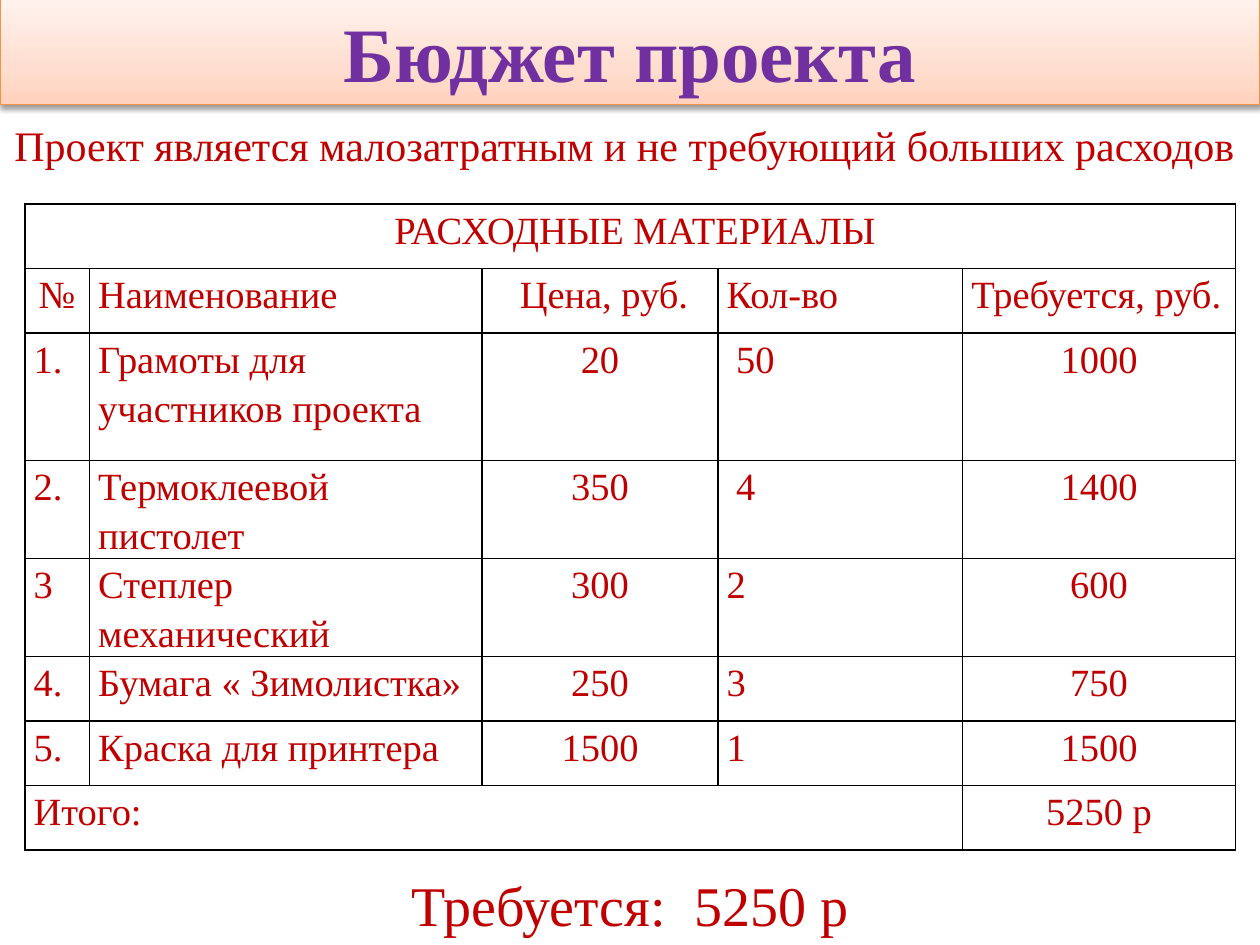
"""Build the project budget slide with its table of consumables."""
from lxml.etree import SubElement
from pptx import Presentation
from pptx.dml.color import RGBColor
from pptx.enum.text import MSO_ANCHOR, MSO_AUTO_SIZE, PP_ALIGN
from pptx.oxml import parse_xml
from pptx.oxml.ns import nsdecls, qn
from pptx.util import Cm, Pt

COLORS = {"text": "C00000", "title": "7030A0", "edge": "F69240", "border": "000000",
          "low": "FFD2BD", "middle": "FFDED0", "high": "FFF2ED"}
FORMATS = {
    "title": {"size": Pt(44), "bold": True, "color": "title"},
    "intro": {"size": Pt(24), "bold": False, "color": "text"},
    "cell": {"size": Pt(22), "bold": False, "color": "text"},
    "total": {"size": Pt(32), "bold": False, "color": "text"},
}
ROWS = [
    ["РАСХОДНЫЕ МАТЕРИАЛЫ", "", "", "", ""],
    ["№", "Наименование", "Цена, руб.", "Кол-во", "Требуется, руб."],
    ["1.", "Грамоты для участников проекта", "20", "50", "1000"],
    ["2.", "Термоклеевой пистолет", "350", "4", "1400"],
    ["3", "Степлер механический", "300", "2", "600"],
    ["4.", "Бумага « Зимолистка»", "250", "3", "750"],
    ["5.", "Краска для принтера", "1500", "1", "1500"],
    ["Итого:", "", "", "", "5250 р"],
]
COLUMN_WIDTHS = [1.3, 7.92, 4.75, 4.93, 5.51]
ROW_HEIGHTS = [1.3, 1.3, 2.57, 1.3, 1.3, 1.3, 1.3, 1.3]
INDENTS = {(0, 0): 0.19, (1, 2): 0.58, (2, 3): 0.19, (3, 3): 0.19}
CENTERED = {(0, 0), (1, 0)} | {(row, col) for row in range(2, 8) for col in (2, 4)}


def write(tf, text, style, align=PP_ALIGN.CENTER):
    p = tf.paragraphs[0]
    p.alignment = align
    r = p.add_run()
    r.text = text
    r.font.name = "Times New Roman"
    for name, value in FORMATS[style].items():
        if name == "color":
            r.font.color.rgb = RGBColor.from_string(COLORS[value])
        else:
            setattr(r.font, name, value)
    return p


def add_border(tc_pr, position, side):
    ln = SubElement(tc_pr, qn(f"a:{side}"), w=str(Pt(1)))
    fill = SubElement(ln, qn("a:solidFill"))
    SubElement(fill, qn("a:srgbClr"), val=COLORS["border"])
    tc_pr.insert(position, ln)


prs = Presentation()
prs.slide_width, prs.slide_height = Cm(25.4), Cm(19.05)
s = prs.slides.add_slide(prs.slide_layouts[5])

table = s.shapes.add_table(8, 5, Cm(0.5), Cm(4.11), Cm(24.41), Cm(11.67)).table
table.first_row = table.horz_banding = False
for column, width in zip(table.columns, COLUMN_WIDTHS):
    column.width = Cm(width)
for row, height in zip(table.rows, ROW_HEIGHTS):
    row.height = Cm(height)
table.cell(0, 0).merge(table.cell(0, 4))
table.cell(7, 0).merge(table.cell(7, 3))

for row, texts in enumerate(ROWS):
    for col, text in enumerate(texts):
        cell = table.cell(row, col)
        margins = {"margin_left": 0.18 + INDENTS.get((row, col), 0), "margin_right": 0.18,
                   "margin_top": 0, "margin_bottom": 0}
        for name, value in margins.items():
            setattr(cell, name, Cm(value))
        cell.fill.background()
        tc_pr = cell._tc.get_or_add_tcPr()
        for position, side in enumerate(("lnL", "lnR", "lnT", "lnB")):
            add_border(tc_pr, position, side)
        if text:
            align = PP_ALIGN.CENTER if (row, col) in CENTERED else PP_ALIGN.LEFT
            write(cell.text_frame, text, "cell", align).line_spacing = 1.15

notes = [
    ("Проект является малозатратным и не требующий больших расходов", "intro", 2.4, 25.18, 1),
    ("Требуется:  5250 р", "total", 17.42, 25.4, 1.63),
]
for text, style, top, width, height in notes:
    sp = s.shapes.add_textbox(0, Cm(top), Cm(width), Cm(height))
    tf = sp.text_frame
    tf.word_wrap = True
    if style == "intro":
        for side in ("left", "right", "top", "bottom"):
            setattr(tf, f"margin_{side}", 0)
    write(tf, text, style)

title = s.shapes.title
title.left, title.top, title.width, title.height = Cm(0), Cm(-0.02), Cm(25.4), Cm(2.13)
stops = "".join(
    f'<a:gs pos="{position}"><a:srgbClr val="{COLORS[name]}"/></a:gs>'
    for position, name in ((0, "low"), (35000, "middle"), (100000, "high")))
sp_pr = title._element.spPr
sp_pr.append(parse_xml(
    f'<a:gradFill {nsdecls("a")} rotWithShape="1"><a:gsLst>{stops}</a:gsLst>'
    '<a:lin ang="16200000" scaled="1"/></a:gradFill>'))
title.line.color.rgb = RGBColor.from_string(COLORS["edge"])
title.line.width = Pt(0.75)
sp_pr.append(parse_xml(
    f'<a:effectLst {nsdecls("a")}><a:outerShdw blurRad="40000" dist="20000" dir="5400000" '
    'rotWithShape="0"><a:srgbClr val="000000"><a:alpha val="38000"/></a:srgbClr>'
    '</a:outerShdw></a:effectLst>'))
tf = title.text_frame
tf.auto_size = MSO_AUTO_SIZE.NONE
tf.vertical_anchor = MSO_ANCHOR.MIDDLE
write(tf, "Бюджет проекта", "title")

prs.save("out.pptx")
